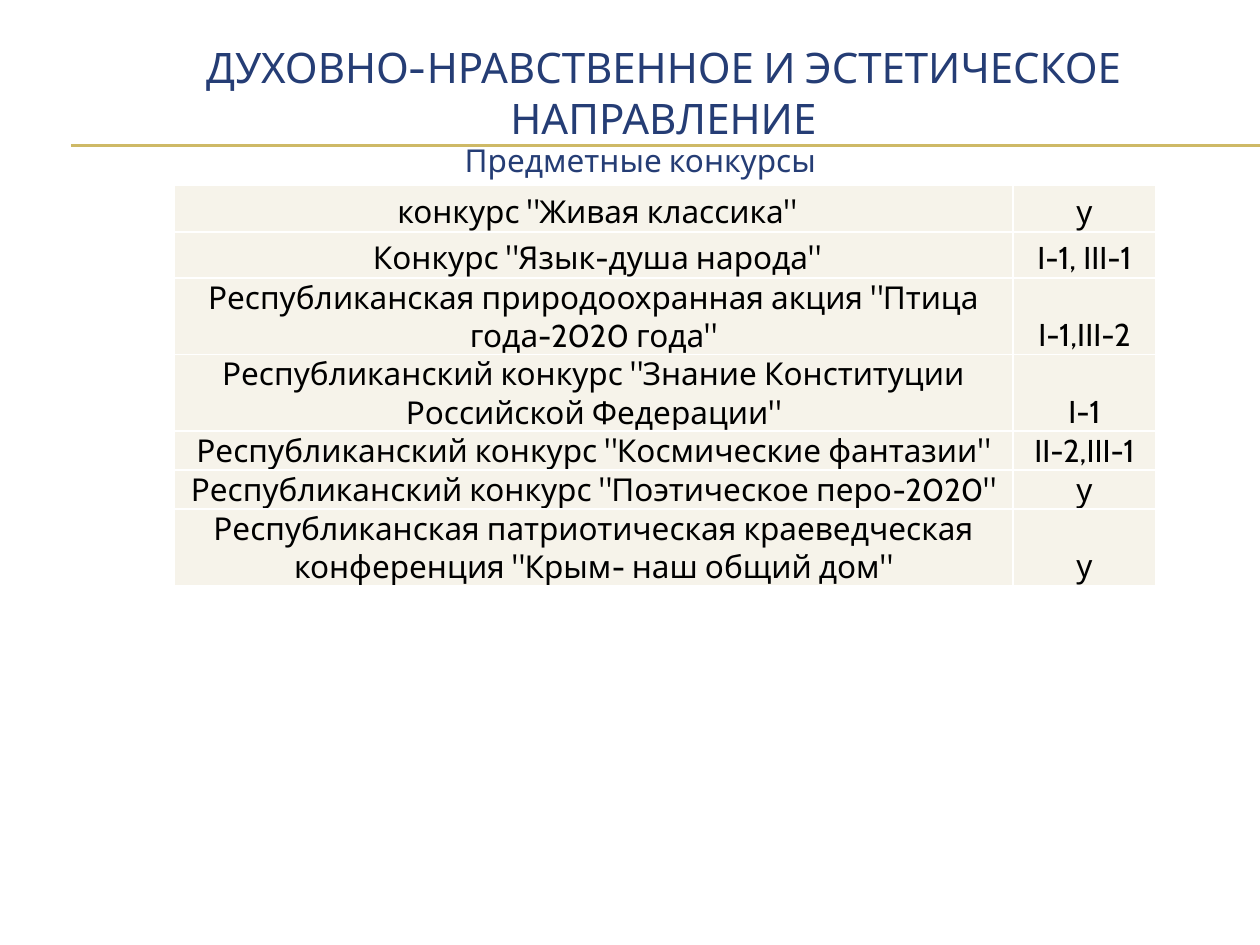
from dataclasses import dataclass

from lxml import etree
from pptx import Presentation
from pptx import util as u
from pptx.dml.color import RGBColor
from pptx.enum import shapes, text
from pptx.oxml import ns


@dataclass(frozen=True)
class Theme:
    font: str = "Cabin"
    heading: str = "253D75"
    body: str = "000000"
    rule: str = "CEB966"
    cell: str = "F6F3EA"
    border: str = "FFFFFF"
    title_size: int = 24
    text_size: int = 18


def px(n):
    return u.Emu(round(n * 914400 / 126))


def write(tf, content, *, size, color, font, align=text.PP_ALIGN.CENTER):
    tf.word_wrap = True
    p = tf.paragraphs[0]
    p.alignment = align
    r = p.add_run()
    r.text = content
    r.font.name = font
    r.font.size = u.Pt(size)
    r.font.color.rgb = RGBColor.from_string(color)


class Builder:
    def __init__(self, s, theme):
        self.s = s
        self.theme = theme

    def rule(self, x1, x2, y):
        line = self.s.shapes.add_connector(
            shapes.MSO_CONNECTOR.STRAIGHT, px(x1), px(y), px(x2), px(y))
        line.line.color.rgb = RGBColor.from_string(self.theme.rule)
        line.line.width = u.Pt(0.75)
        etree.SubElement(line._element.spPr, ns.qn("a:effectLst"))

    def heading(self, content, x, y, w, h, size, anchor):
        sp = self.s.shapes.add_textbox(px(x), px(y), px(w), px(h))
        tf = sp.text_frame
        tf.vertical_anchor = anchor
        write(tf, content, size=size, color=self.theme.heading, font=self.theme.font)

    def borders(self, cell):
        tc_pr = cell._tc.get_or_add_tcPr()
        for side in ("L", "R", "T", "B"):
            ln = etree.SubElement(tc_pr, ns.qn(f"a:ln{side}"), w=str(u.Pt(1)))
            fill = etree.SubElement(ln, ns.qn("a:solidFill"))
            etree.SubElement(fill, ns.qn("a:srgbClr"), val=self.theme.border)

    def cell(self, cell, content):
        self.borders(cell)
        cell.fill.solid()
        cell.fill.fore_color.rgb = RGBColor.from_string(self.theme.cell)
        cell.vertical_anchor = text.MSO_ANCHOR.BOTTOM
        cell.margin_left = cell.margin_right = cell.margin_top = px(1)
        cell.margin_bottom = 0
        write(cell.text_frame, content, size=self.theme.text_size,
              color=self.theme.body, font=self.theme.font)

    def table(self, rows, x, y, widths, heights):
        frame = self.s.shapes.add_table(
            len(rows), len(widths), px(x), px(y), px(sum(widths)), px(sum(heights)))
        table = frame.table
        table.first_row = table.horz_banding = False
        for column, width in zip(table.columns, widths):
            column.width = px(width)
        for row, height, values in zip(table.rows, heights, rows):
            row.height = px(height)
            for cell, value in zip(row.cells, values):
                self.cell(cell, value)


CONTESTS = [
    (' конкурс "Живая классика"', "у"),
    (' Конкурс "Язык-душа народа"', "I-1, III-1"),
    ('Республиканская природоохранная акция "Птица года-2020 года"', "I-1,III-2"),
    ('Республиканский конкурс "Знание Конституции Российской Федерации"', "I-1"),
    ('Республиканский конкурс "Космические фантазии"', "II-2,III-1"),
    ('Республиканский конкурс "Поэтическое перо-2020"', "у"),
    ('Республиканская патриотическая краеведческая конференция "Крым- наш общий дом"', "у"),
]


def main():
    prs = Presentation()
    prs.slide_width, prs.slide_height = px(1260), px(945)
    theme = Theme()
    b = Builder(prs.slides.add_slide(prs.slide_layouts[6]), theme)
    for y in (145, 146):
        b.rule(71, 1260, y)
    b.heading("ДУХОВНО-НРАВСТВЕННОЕ И ЭСТЕТИЧЕСКОЕ НАПРАВЛЕНИЕ",
              65, 56, 1197, 72, theme.title_size, text.MSO_ANCHOR.MIDDLE)
    b.heading("Предметные конкурсы",
              42, 135, 1197, 784, theme.text_size, text.MSO_ANCHOR.TOP)
    b.table(CONTESTS, 174, 185, (839, 143), (47, 46, 74, 74, 38, 38, 64))
    prs.save("out.pptx")


if __name__ == "__main__":
    main()
